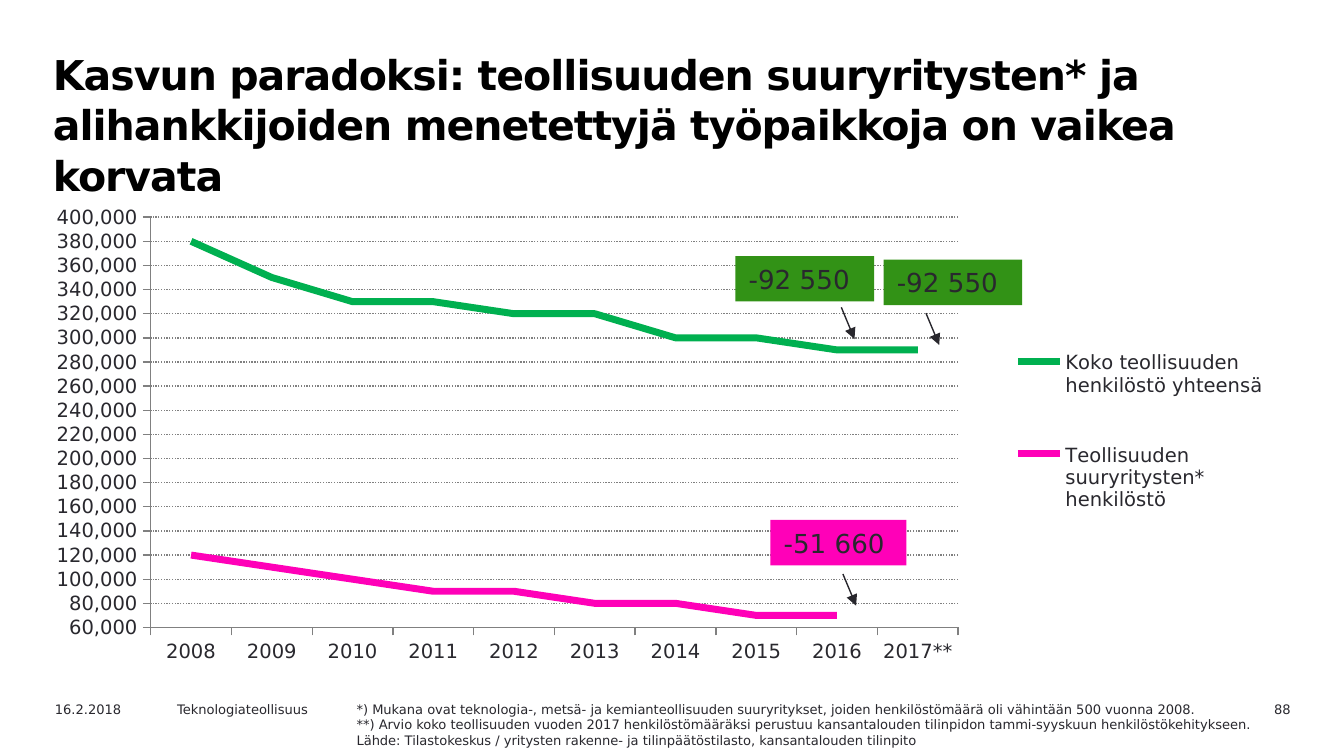
from dataclasses import dataclass
from typing import Any

from lxml import etree
from pptx import Presentation
from pptx.chart.data import CategoryChartData
from pptx.dml.color import RGBColor
from pptx.enum.chart import XL_CHART_TYPE, XL_LEGEND_POSITION, XL_MARKER_STYLE, XL_TICK_MARK
from pptx.enum.dml import MSO_LINE
from pptx.enum.shapes import MSO_CONNECTOR, MSO_SHAPE
from pptx.enum.text import MSO_ANCHOR, PP_ALIGN
from pptx.oxml import parse_xml
from pptx.oxml.ns import nsdecls, qn
from pptx.util import Cm, Pt

LINE_CHART = XL_CHART_TYPE.LINE
LEGEND_RIGHT = XL_LEGEND_POSITION.RIGHT
NO_MARKER = XL_MARKER_STYLE.NONE
TICK_OUTSIDE = XL_TICK_MARK.OUTSIDE
TICK_NONE = XL_TICK_MARK.NONE
DOTTED = MSO_LINE.ROUND_DOT
STRAIGHT = MSO_CONNECTOR.STRAIGHT
RECTANGLE = MSO_SHAPE.RECTANGLE
TOP, MIDDLE = MSO_ANCHOR.TOP, MSO_ANCHOR.MIDDLE
LEFT, RIGHT = PP_ALIGN.LEFT, PP_ALIGN.RIGHT

FONT = "DejaVu Sans"
BLACK = RGBColor(0x00, 0x00, 0x00)
INK = RGBColor(0x29, 0x28, 0x2E)
ARROW = RGBColor(0x28, 0x27, 0x2D)
GRAY = RGBColor(0x80, 0x80, 0x80)
GREEN = RGBColor(0x00, 0xB0, 0x50)
DARK_GREEN = RGBColor(0x32, 0x92, 0x16)
PINK = RGBColor(0xFF, 0x00, 0xB8)

FOOTER_TOP = 13.13
CALLOUT_HEIGHT = 0.86
ARROW_RUN, ARROW_RISE = 0.25, 0.6
PLOT_PERCENT = {"x": 7.4, "y": 4.1, "w": 65.6, "h": 84.6}
LEGEND_PERCENT = {"x": 76.3, "y": 22, "w": 23, "h": 52.5}


@dataclass(frozen=True)
class TextBlock:
    lines: tuple[str, ...]
    left: float
    top: float
    width: float
    height: float
    alignment: Any = LEFT


@dataclass(frozen=True)
class Callout:
    text: str
    left: float
    top: float
    width: float
    fill: RGBColor
    arrow_left: float
    arrow_top: float


@dataclass(frozen=True)
class Series:
    name: str
    values: tuple[int | None, ...]
    color: RGBColor


TITLE = TextBlock(
    ("Kasvun paradoksi: teollisuuden suuryritysten* ja alihankkijoiden "
     "menetettyjä työpaikkoja on vaikea korvata",),
    0.7, 0.79, 22.2, 1.8,
)
FOOTERS = (
    TextBlock(("88",), 22.25, FOOTER_TOP, 2.39, 0.46, RIGHT),
    TextBlock(("16.2.2018",), 0.79, FOOTER_TOP, 2.54, 0.46),
    TextBlock(("Teknologiateollisuus",), 3.1, FOOTER_TOP, 3.61, 0.46),
    TextBlock((
        "*) Mukana ovat teknologia-, metsä- ja kemianteollisuuden suuryritykset, "
        "joiden henkilöstömäärä oli vähintään 500 vuonna 2008.",
        "**) Arvio koko teollisuuden vuoden 2017 henkilöstömääräksi perustuu "
        "kansantalouden tilinpidon tammi-syyskuun henkilöstökehitykseen.",
        "Lähde: Tilastokeskus / yritysten rakenne- ja tilinpäätöstilasto, "
        "kansantalouden tilinpito",
    ), 6.49, FOOTER_TOP, 17.63, 0.61),
)
CALLOUTS = (
    Callout("-92 550", 13.9, 4.84, 2.62, DARK_GREEN, 15.9, 5.81),
    Callout("-92 550", 16.7, 4.91, 2.62, DARK_GREEN, 17.5, 5.92),
    Callout("-51 660", 14.56, 9.83, 2.57, PINK, 15.93, 10.85),
)
YEARS = [str(year) for year in range(2008, 2017)] + ["2017**"]
SERIES = (
    Series("Koko teollisuuden henkilöstö yhteensä",
           (380000, 350000, 330000, 330000, 320000, 320000, 300000, 300000, 290000, 290000),
           GREEN),
    Series("Teollisuuden suuryritysten* henkilöstö",
           (120000, 110000, 100000, 90000, 90000, 80000, 80000, 70000, 70000, None),
           PINK),
)


def apply_format(target: Any, values: dict[str, Any]) -> None:
    for name, value in values.items():
        setattr(target, name, value)


def format_font(font: Any, size: float, color: RGBColor = INK, bold: bool = False) -> None:
    apply_format(font, {"name": FONT, "size": Pt(size), "bold": bold})
    font.color.rgb = color


def format_line(line: Any, color: RGBColor, width: float) -> None:
    line.color.rgb = color
    line.width = Pt(width)


def add_text(slide: Any, block: TextBlock, size: float, color: RGBColor = INK,
             bold: bool = False) -> Any:
    shape = slide.shapes.add_textbox(
        Cm(block.left), Cm(block.top), Cm(block.width), Cm(block.height))
    frame = shape.text_frame
    apply_format(frame, {"word_wrap": True, "vertical_anchor": TOP})
    frame.text = "\n".join(block.lines)
    for paragraph in frame.paragraphs:
        paragraph.alignment = block.alignment
        format_font(paragraph.runs[0].font, size, color, bold)
    return shape


def add_title(slide: Any) -> None:
    paragraph = add_text(slide, TITLE, 22, BLACK, True).text_frame.paragraphs[0]
    paragraph.line_spacing = Pt(27)
    paragraph._p.get_or_add_pPr().set("marL", str(Cm(0.05)))
    paragraph.runs[0]._r.get_or_add_rPr().set("spc", "-50")


def set_layout(parent: Any, percentages: dict[str, float], inner: bool = False) -> None:
    for old in parent.findall(qn("c:layout")):
        parent.remove(old)
    settings = {"layoutTarget": "inner"} if inner else {}
    settings |= {"xMode": "edge", "yMode": "edge"}
    settings |= {name: value / 100 for name, value in percentages.items()}
    children = "".join(f'<c:{name} val="{value}"/>' for name, value in settings.items())
    layout = parse_xml(
        f'<c:layout {nsdecls("c")}><c:manualLayout>{children}</c:manualLayout></c:layout>')
    parent.insert(0 if inner else 1, layout)


def add_staff_chart(slide: Any) -> None:
    data = CategoryChartData()
    data.categories = YEARS
    for series in SERIES:
        data.add_series(series.name, series.values)
    chart = slide.shapes.add_chart(
        LINE_CHART, Cm(1.07), Cm(3.73), Cm(23.32), Cm(9.17), data).chart
    apply_format(chart, {"has_title": False, "has_legend": True})
    format_font(chart.font, 10.5)
    apply_format(chart.legend, {"position": LEGEND_RIGHT, "include_in_layout": False})
    set_layout(chart.legend._element, LEGEND_PERCENT)
    set_layout(chart._chartSpace.chart.plotArea, PLOT_PERCENT, inner=True)

    for axis in (chart.category_axis, chart.value_axis):
        apply_format(axis, {"major_tick_mark": TICK_OUTSIDE, "minor_tick_mark": TICK_NONE})
        format_line(axis.format.line, GRAY, 0.75)
    apply_format(chart.value_axis, {
        "minimum_scale": 60000, "maximum_scale": 400000,
        "major_unit": 20000, "has_major_gridlines": True})
    apply_format(chart.value_axis.tick_labels, {
        "number_format": "#,##0;[Red]#,##0", "number_format_is_linked": False})
    gridline = chart.value_axis.major_gridlines.format.line
    format_line(gridline, GRAY, 0.75)
    gridline.dash_style = DOTTED

    for plotted, series in zip(chart.plots[0].series, SERIES):
        plotted.smooth = False
        plotted.marker.style = NO_MARKER
        format_line(plotted.format.line, series.color, 3.75)


def add_callout(slide: Any, callout: Callout) -> None:
    shape = slide.shapes.add_shape(
        RECTANGLE, Cm(callout.left), Cm(callout.top), Cm(callout.width), Cm(CALLOUT_HEIGHT))
    shape.shadow.inherit = False
    shape.fill.solid()
    shape.fill.fore_color.rgb = callout.fill
    shape.line.fill.background()
    frame = shape.text_frame
    apply_format(frame, {"text": callout.text, "word_wrap": True, "vertical_anchor": MIDDLE})
    frame.paragraphs[0].alignment = LEFT
    format_font(frame.paragraphs[0].runs[0].font, 14)

    arrow = slide.shapes.add_connector(
        STRAIGHT, Cm(callout.arrow_left), Cm(callout.arrow_top),
        Cm(callout.arrow_left + ARROW_RUN), Cm(callout.arrow_top + ARROW_RISE))
    format_line(arrow.line, ARROW, 0.75)
    etree.SubElement(arrow.line._get_or_add_ln(), qn("a:tailEnd"), type="triangle")
    etree.SubElement(arrow._element.spPr, qn("a:effectLst"))


def main() -> None:
    presentation = Presentation()
    apply_format(presentation, {"slide_width": Cm(25.4), "slide_height": Cm(14.29)})
    slide = presentation.slides.add_slide(presentation.slide_layouts[6])
    for footer in FOOTERS:
        add_text(slide, footer, 7)
    add_title(slide)
    add_staff_chart(slide)
    for callout in CALLOUTS:
        add_callout(slide, callout)
    presentation.save("out.pptx")


if __name__ == "__main__":
    main()
